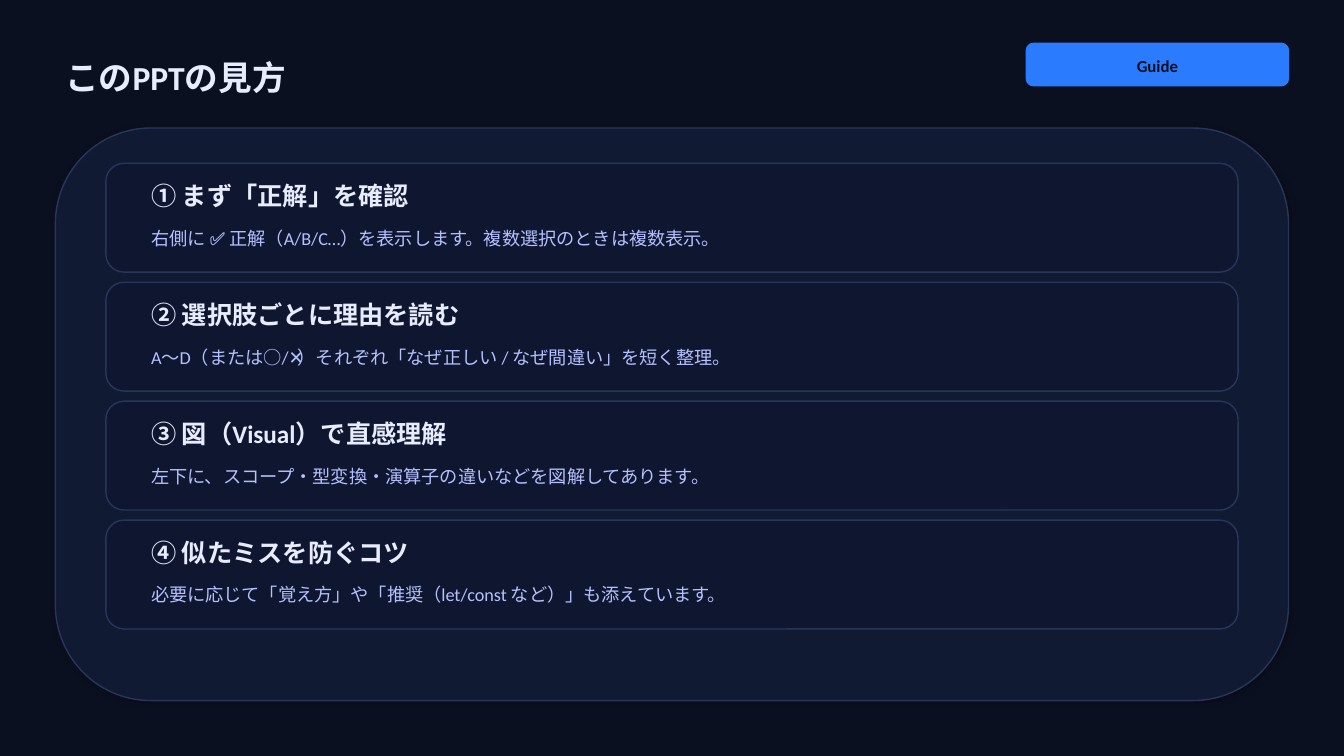
from pptx import Presentation, util as u
from pptx.dml.color import RGBColor
from pptx.enum import shapes, text
from pptx.oxml import parse_xml
from pptx.oxml.ns import nsdecls

NIGHT = RGBColor(0x0B, 0x10, 0x20)
PANEL = RGBColor(0x11, 0x1A, 0x33)
CARD = RGBColor(0x0F, 0x17, 0x30)
EDGE = RGBColor(0x2A, 0x35, 0x5A)
BLUE = RGBColor(0x2B, 0x7B, 0xFF)
WHITE = RGBColor(0xE8, 0xEC, 0xFF)
LAVENDER = RGBColor(0xB7, 0xC0, 0xFF)

STEPS = [
    ("① まず「正解」を確認",
     "右側に ✅ 正解（A/B/C…）を表示します。複数選択のときは複数表示。"),
    ("② 選択肢ごとに理由を読む",
     "A〜D（または○/✕）それぞれ「なぜ正しい / なぜ間違い」を短く整理。"),
    ("③ 図（Visual）で直感理解",
     "左下に、スコープ・型変換・演算子の違いなどを図解してあります。"),
    ("④ 似たミスを防ぐコツ",
     "必要に応じて「覚え方」や「推奨（let/const など）」も添えています。"),
]
CARD_TOP, CARD_STEP = 1.62, 1.18


class GuideSlide:
    font = "Calibri"

    def __init__(self, prs):
        self.s = prs.slides.add_slide(prs.slide_layouts[6])
        fill = self.s.background.fill
        fill.solid()
        fill.fore_color.rgb = NIGHT

    def box(self, *at, fill, line):
        sp = self.s.shapes.add_shape(
            shapes.MSO_SHAPE.ROUNDED_RECTANGLE, *map(u.Inches, at))
        sp.shadow.inherit = False
        sp.fill.solid()
        sp.fill.fore_color.rgb = fill
        sp.line.color.rgb = line
        sp.line.width = u.Pt(1)
        return sp

    def soft_shadow(self, sp):
        """Give a shape a faint black shadow towards the lower right."""
        effects = sp._element.spPr.find(
            "{http://schemas.openxmlformats.org/drawingml/2006/main}effectLst")
        effects.append(parse_xml(
            f'<a:outerShdw {nsdecls("a")} blurRad="{u.Pt(4)}" dist="{u.Pt(1.5)}" '
            'dir="2700000" algn="ctr" rotWithShape="0"><a:srgbClr val="000000">'
            '<a:alpha val="25000"/></a:srgbClr></a:outerShdw>'))

    def label(self, words, *at, size, color, bold=False,
              align=text.PP_ALIGN.LEFT):
        tf = self.s.shapes.add_textbox(*map(u.Inches, at)).text_frame
        tf.word_wrap = True
        tf.vertical_anchor = text.MSO_ANCHOR.MIDDLE
        p = tf.paragraphs[0]
        p.alignment = align
        r = p.add_run()
        r.text = words
        style = {"name": self.font, "size": u.Pt(size), "bold": bold}
        for key, value in style.items():
            setattr(r.font, key, value)
        r.font.color.rgb = color

    def card(self, top, heading, detail):
        self.box(1.05, top, 11.23, 1.08, fill=CARD, line=EDGE)
        self.label(heading, 1.4, top + 0.16, 10.53, 0.32,
                   size=18, color=WHITE, bold=True)
        self.label(detail, 1.4, top + 0.5, 10.53, 0.48,
                   size=13, color=LAVENDER)


def main():
    prs = Presentation()
    prs.slide_width, prs.slide_height = u.Inches(13.33), u.Inches(7.5)
    guide = GuideSlide(prs)
    guide.label("このPPTの見方", 0.55, 0.4, 12.23, 0.72,
                size=24, color=WHITE, bold=True)
    guide.box(10.18, 0.43, 2.6, 0.42, fill=BLUE, line=BLUE)
    guide.label("Guide", 10.18, 0.49, 2.6, 0.32, size=12, color=NIGHT,
                bold=True, align=text.PP_ALIGN.CENTER)
    panel = guide.box(0.55, 1.27, 12.23, 5.68, fill=PANEL, line=EDGE)
    guide.soft_shadow(panel)
    for i, (heading, detail) in enumerate(STEPS):
        guide.card(CARD_TOP + i * CARD_STEP, heading, detail)
    prs.save("out.pptx")


if __name__ == "__main__":
    main()
